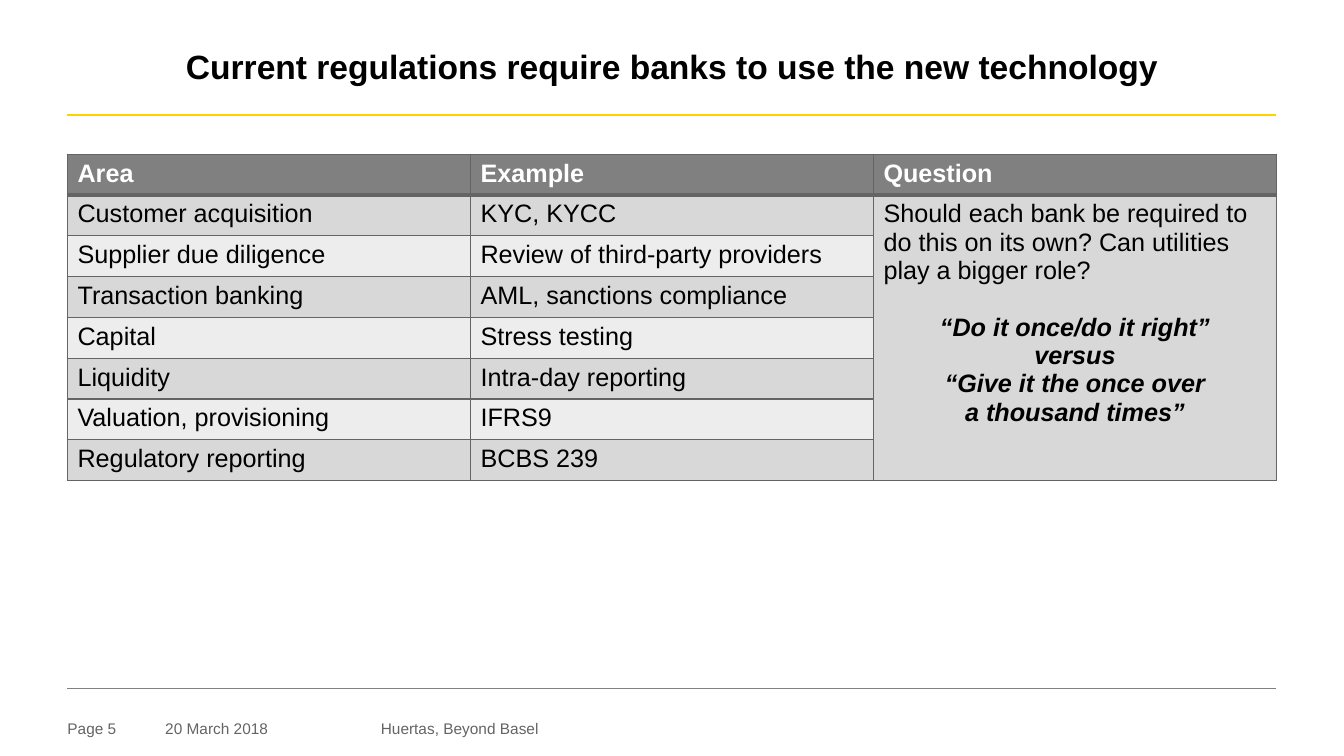
import dataclasses

import pptx
import pptx.dml.color
import pptx.enum.shapes
import pptx.enum.text
import pptx.oxml
import pptx.oxml.ns
import pptx.util

PX = 9144  # EMU per px, 100 px to the inch
ALIGN = pptx.enum.text.PP_ALIGN


@dataclasses.dataclass(frozen=True)
class Theme:
    font: str = "Arial"
    black: str = "000000"
    white: str = "FFFFFF"
    grey: str = "646464"
    head: str = "808080"
    dark: str = "D8D8D8"
    light: str = "EDEDED"
    gold: str = "FFD200"
    title: int = 24
    body: int = 18
    small: int = 11


THEME = Theme()

HEADS = ["Area", "Example", "Question"]
ROWS = [
    ("Customer acquisition", "KYC, KYCC"),
    ("Supplier due diligence", "Review of third-party providers"),
    ("Transaction banking", "AML, sanctions compliance"),
    ("Capital", "Stress testing"),
    ("Liquidity", "Intra-day reporting"),
    ("Valuation, provisioning", "IFRS9"),
    ("Regulatory reporting", "BCBS 239"),
]
ASK = "Should each bank be required to do this on its own? Can utilities play a bigger role?"
QUOTE = ["“Do it once/do it right”", "versus", "“Give it the once over", "a thousand times”"]


def px(*nums):
    return [pptx.util.Emu(n * PX) for n in nums]


def rgb(code):
    return pptx.dml.color.RGBColor.from_string(code)


def style(para, size, color, bold=False, slant=False, align=ALIGN.LEFT):
    para.alignment = align
    for run in para.runs:
        font = run.font
        font.name, font.size = THEME.font, pptx.util.Pt(size)
        font.bold, font.italic = bold, slant
        font.color.rgb = rgb(color)


def add_text(slide, box, text, size, color, wrap=True, **look):
    frame = slide.shapes.add_textbox(*px(*box)).text_frame
    frame.margin_left = frame.margin_right = frame.margin_top = frame.margin_bottom = 0
    frame.word_wrap = wrap
    frame.text = text
    style(frame.paragraphs[0], size, color, **look)
    return frame


def add_rule(slide, left, top, width, color, weight):
    line = slide.shapes.add_connector(
        pptx.enum.shapes.MSO_CONNECTOR.STRAIGHT, *px(left, top, left + width, top))
    line.line.color.rgb = rgb(color)
    line.line.width = pptx.util.Pt(weight)
    line._element.spPr.append(pptx.oxml.parse_xml(
        f'<a:effectLst {pptx.oxml.ns.nsdecls("a")}/>'))


def add_edges(cell, top=1, base=1):
    """Draw the four borders of a cell, with widths in points."""
    props = cell._tc.get_or_add_tcPr()
    for spot, (side, weight) in enumerate(zip("LRTB", (1, 1, top, base))):
        props.insert(spot, pptx.oxml.parse_xml(
            f'<a:ln{side} {pptx.oxml.ns.nsdecls("a")} w="{weight * 12700}">'
            f'<a:solidFill><a:srgbClr val="{THEME.grey}"/></a:solidFill></a:ln{side}>'))


def fill_cell(cell, text, fill, color, bold=False):
    cell.fill.solid()
    cell.fill.fore_color.rgb = rgb(fill)
    cell.text = text
    style(cell.text_frame.paragraphs[0], THEME.body, color, bold)


def add_quote(frame):
    for num, text in enumerate(QUOTE):
        para = frame.add_paragraph()
        para.text = text
        style(para, THEME.body, THEME.black, True, True, ALIGN.CENTER)
        if num == 0:
            para.space_before = pptx.util.Pt(20.7)


def add_title(slide, left, top, width, height):
    frame = add_text(slide, (left, top, width, height),
                     "Current regulations require banks to use the new technology",
                     THEME.title, THEME.black, bold=True, align=ALIGN.CENTER)
    frame.vertical_anchor = pptx.enum.text.MSO_ANCHOR.MIDDLE
    frame.paragraphs[0].line_spacing = 0.85
    add_rule(slide, left, top + 92, width, THEME.gold, 1.5)


def add_grid(slide, left, top, width, height):
    count = len(ROWS) + 1
    table = slide.shapes.add_table(
        count, len(HEADS), *px(left, top, width, height)).table
    table.horz_banding = False
    for col, text in enumerate(HEADS):
        cell = table.cell(0, col)
        fill_cell(cell, text, THEME.head, THEME.white, True)
        add_edges(cell, base=3)
    for row, pair in enumerate(ROWS, 1):
        fill = THEME.dark if row % 2 else THEME.light
        for col, text in enumerate(pair):
            fill_cell(table.cell(row, col), text, fill, THEME.black)
        fill_cell(table.cell(row, 2), ASK if row == 1 else "", THEME.dark, THEME.black)
        for col in range(len(HEADS)):
            add_edges(table.cell(row, col), top=3 if row == 1 else 1)
    ask = table.cell(1, 2)
    ask.merge(table.cell(count - 1, 2))
    add_quote(ask.text_frame)


def add_foot(slide, left, top, width, height):
    add_rule(slide, left, top, width, THEME.head, 0.25)
    for shift, wide, text, wrap in [(0, 97, "Page 5", True),
                                    (97, 150, "20 March 2018", False),
                                    (311, 501, "Huertas, Beyond Basel", True)]:
        add_text(slide, (left + shift, top + 30, wide, height - 30), text,
                 THEME.small, THEME.grey, wrap)


def main():
    deck = pptx.Presentation()
    deck.slide_width, deck.slide_height = px(1334, 750)
    slide = deck.slides.add_slide(deck.slide_layouts[6])
    left, width = 67, 1200
    add_title(slide, left, 22, width, 94)
    add_grid(slide, left, 153, width, 324)
    add_foot(slide, left, 683, width, 52)
    deck.save("out.pptx")


if __name__ == "__main__":
    main()
